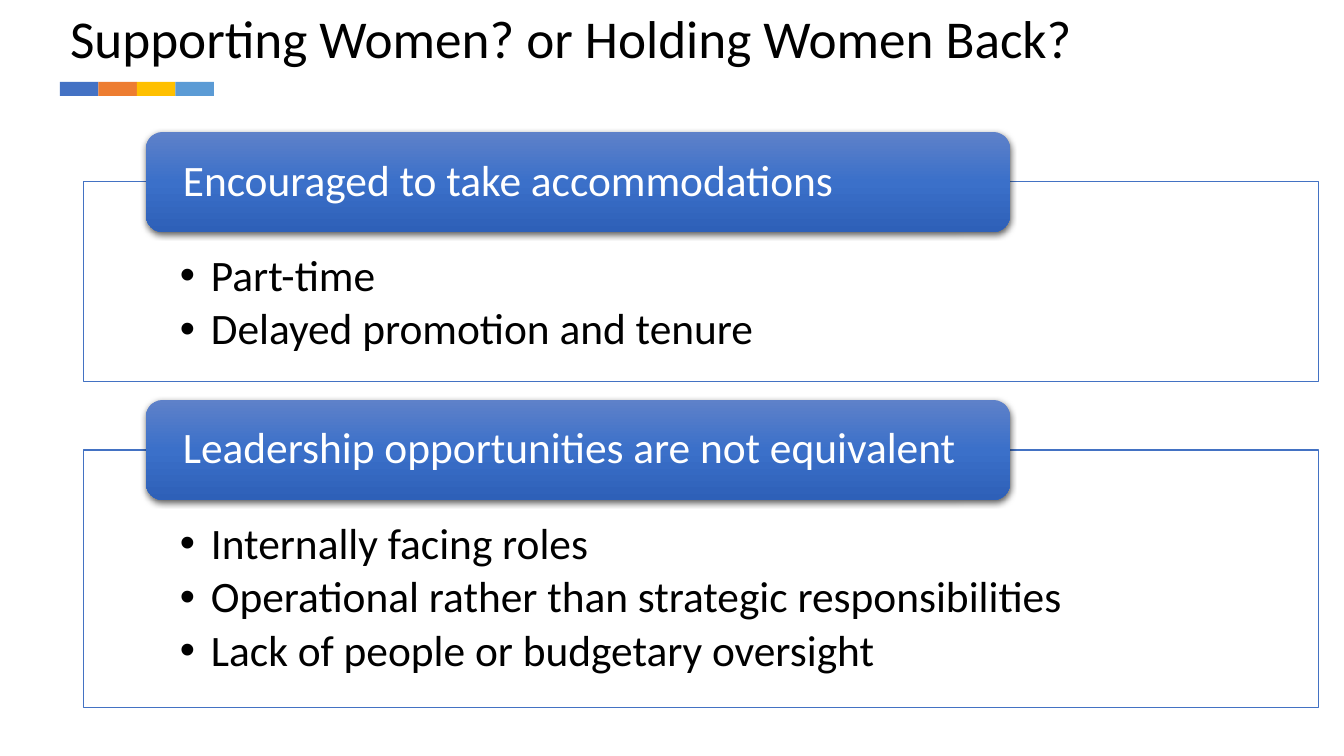
from copy import deepcopy
from lxml.etree import SubElement
from pptx import Presentation
from pptx.dml.color import RGBColor
from pptx.enum.shapes import MSO_SHAPE
from pptx.enum.text import MSO_ANCHOR, PP_ALIGN
from pptx.oxml.ns import qn
from pptx.util import Pt

TITLE = "Supporting Women? or Holding Women Back?"
SECTIONS = [
    {"heading": "Encouraged to take accommodations",
     "points": ["Part-time", "Delayed promotion and tenure"],
     "top": 182, "height": 200},
    {"heading": "Leadership opportunities are not equivalent",
     "points": ["Internally facing roles",
                "Operational rather than strategic responsibilities",
                "Lack of people or budgetary oversight"],
     "top": 450, "height": 258},
]

BLACK = RGBColor(0x00, 0x00, 0x00)
WHITE = RGBColor(0xFF, 0xFF, 0xFF)
FRAME_BLUE = RGBColor(0x43, 0x72, 0xC3)
STRIPE_COLORS = [RGBColor(0x44, 0x72, 0xC4), RGBColor(0xED, 0x7D, 0x31),
                 RGBColor(0xFF, 0xC0, 0x00), RGBColor(0x5B, 0x9B, 0xD5)]
HEADING_STOPS = [(0, RGBColor(0x5E, 0x81, 0xC9)),
                 (0.5, RGBColor(0x3B, 0x70, 0xC9)),
                 (1, RGBColor(0x2E, 0x60, 0xB8))]

FONT = "Calibri"
EMU_PER_INCH = 914400
PX_PER_INCH = 100.8
STRIPE_LEFT, STRIPE_TOP, STRIPE_SPAN, STRIPE_HEIGHT = 60, 82, 154, 14
FRAME_LEFT, FRAME_WIDTH = 84, 1235
HEADING_LEFT, HEADING_WIDTH, HEADING_HEIGHT = 146, 864, 100
BULLET_INDENT = 31


def px(length):
    return round(length * EMU_PER_INCH / PX_PER_INCH)


def add_box(slide, kind, left, top, width, height):
    box = slide.shapes.add_shape(kind, px(left), px(top), px(width), px(height))
    box.shadow.inherit = False
    box.line.fill.background()
    return box


def write_text(shape, lines, size, color, insets, anchor, bulleted=False):
    frame = shape.text_frame
    frame.word_wrap = True
    frame.vertical_anchor = anchor
    (frame.margin_left, frame.margin_top,
     frame.margin_right, frame.margin_bottom) = map(px, insets)
    for index, line in enumerate(lines):
        paragraph = frame.add_paragraph() if index else frame.paragraphs[0]
        paragraph.text = line
        paragraph.alignment = PP_ALIGN.LEFT
        if bulleted:
            add_bullet(paragraph, color)
            if index:
                paragraph.space_before = Pt(4.7)
        paragraph.line_spacing = 0.9
        paragraph.font.name = FONT
        paragraph.font.size = Pt(size)
        paragraph.font.color.rgb = color


def add_bullet(paragraph, color):
    paragraph.level = 1
    properties = paragraph._p.get_or_add_pPr()
    properties.set("marL", str(px(BULLET_INDENT)))
    properties.set("indent", str(-px(BULLET_INDENT)))
    bullet_color = SubElement(properties, qn("a:buClr"))
    SubElement(bullet_color, qn("a:srgbClr"), val=str(color))
    SubElement(properties, qn("a:buFont"), typeface="Arial")
    SubElement(properties, qn("a:buChar"), char="•")


def shade_heading(heading):
    heading.fill.gradient()
    heading.fill.gradient_angle = 270
    properties = heading._element.spPr
    stop_list = properties.find(qn("a:gradFill")).find(qn("a:gsLst"))
    stop_list.append(deepcopy(stop_list[0]))
    for stop, (position, color) in zip(heading.fill.gradient_stops, HEADING_STOPS):
        stop.position = position
        stop.color.rgb = color
    shadow = SubElement(properties.find(qn("a:effectLst")), qn("a:outerShdw"),
                        blurRad=str(Pt(4.5)), dist=str(Pt(1.5)),
                        dir="5400000", algn="ctr", rotWithShape="0")
    shadow_color = SubElement(shadow, qn("a:srgbClr"), val=str(BLACK))
    SubElement(shadow_color, qn("a:alpha"), val="63000")


def add_section(slide, section):
    top = section["top"]
    frame = add_box(slide, MSO_SHAPE.RECTANGLE, FRAME_LEFT, top,
                    FRAME_WIDTH, section["height"])
    frame.fill.solid()
    frame.fill.fore_color.rgb = WHITE
    fill_color = frame._element.spPr.find(qn("a:solidFill"))[0]
    SubElement(fill_color, qn("a:alpha"), val="90000")
    frame.line.color.rgb = FRAME_BLUE
    frame.line.width = Pt(0.75)
    write_text(frame, section["points"], 31, BLACK, (96, 72, 96, 24),
               MSO_ANCHOR.TOP, bulleted=True)

    heading = add_box(slide, MSO_SHAPE.ROUNDED_RECTANGLE, HEADING_LEFT,
                      top - HEADING_HEIGHT / 2, HEADING_WIDTH, HEADING_HEIGHT)
    shade_heading(heading)
    write_text(heading, [section["heading"]], 31, WHITE, (32, 0, 32, 0),
               MSO_ANCHOR.MIDDLE)


def main():
    presentation = Presentation()
    presentation.slide_width, presentation.slide_height = px(1344), px(756)
    slide = presentation.slides.add_slide(presentation.slide_layouts[6])

    stripe_width = STRIPE_SPAN / len(STRIPE_COLORS)
    for index, color in enumerate(STRIPE_COLORS):
        stripe = add_box(slide, MSO_SHAPE.RECTANGLE,
                         STRIPE_LEFT + index * stripe_width, STRIPE_TOP,
                         stripe_width, STRIPE_HEIGHT)
        stripe.fill.solid()
        stripe.fill.fore_color.rgb = color

    title = slide.shapes.add_textbox(px(60), px(0), px(1191), px(82))
    write_text(title, [TITLE], 38, BLACK, (10, 5, 10, 5), MSO_ANCHOR.MIDDLE)

    for section in SECTIONS:
        add_section(slide, section)

    presentation.save("out.pptx")


if __name__ == "__main__":
    main()
